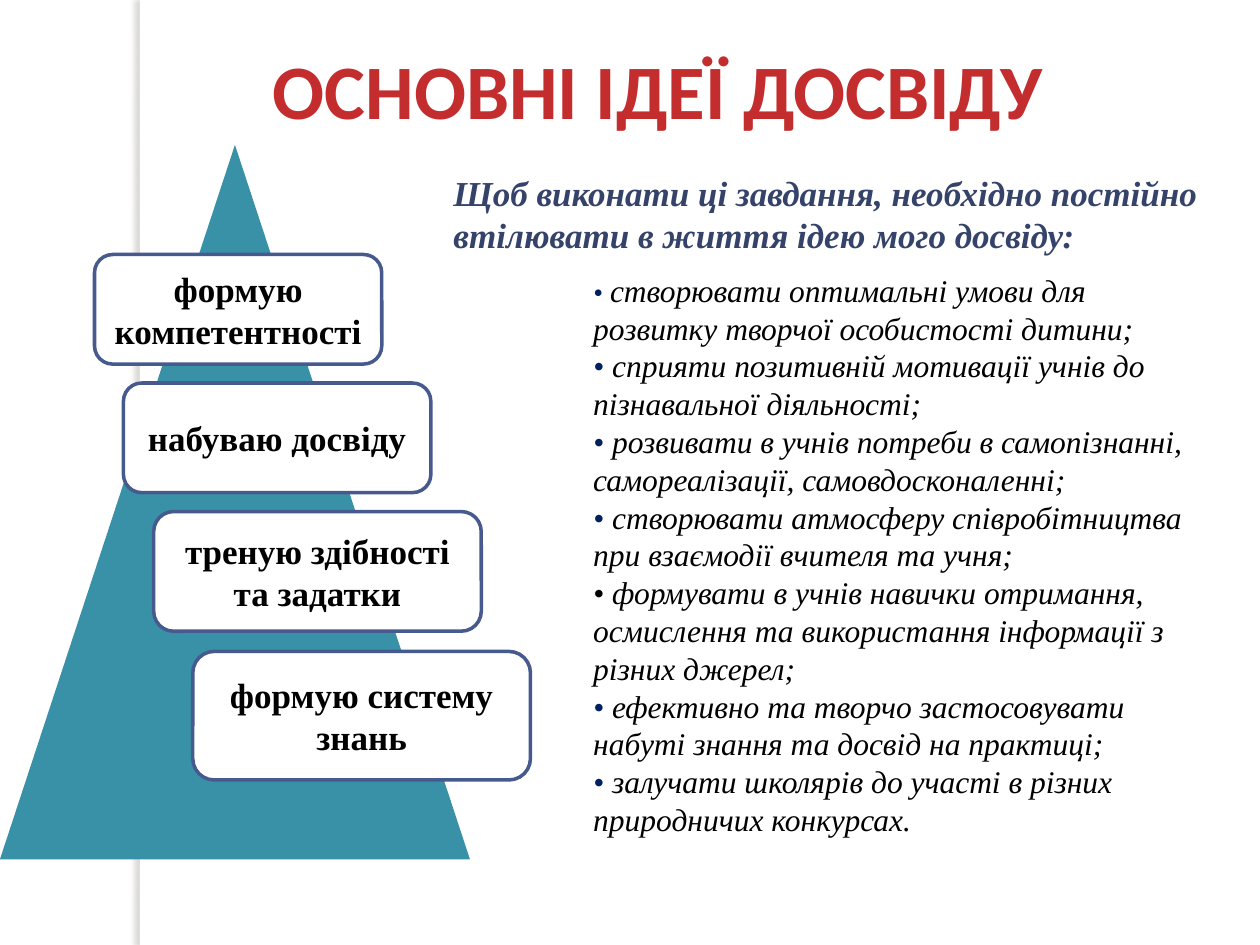
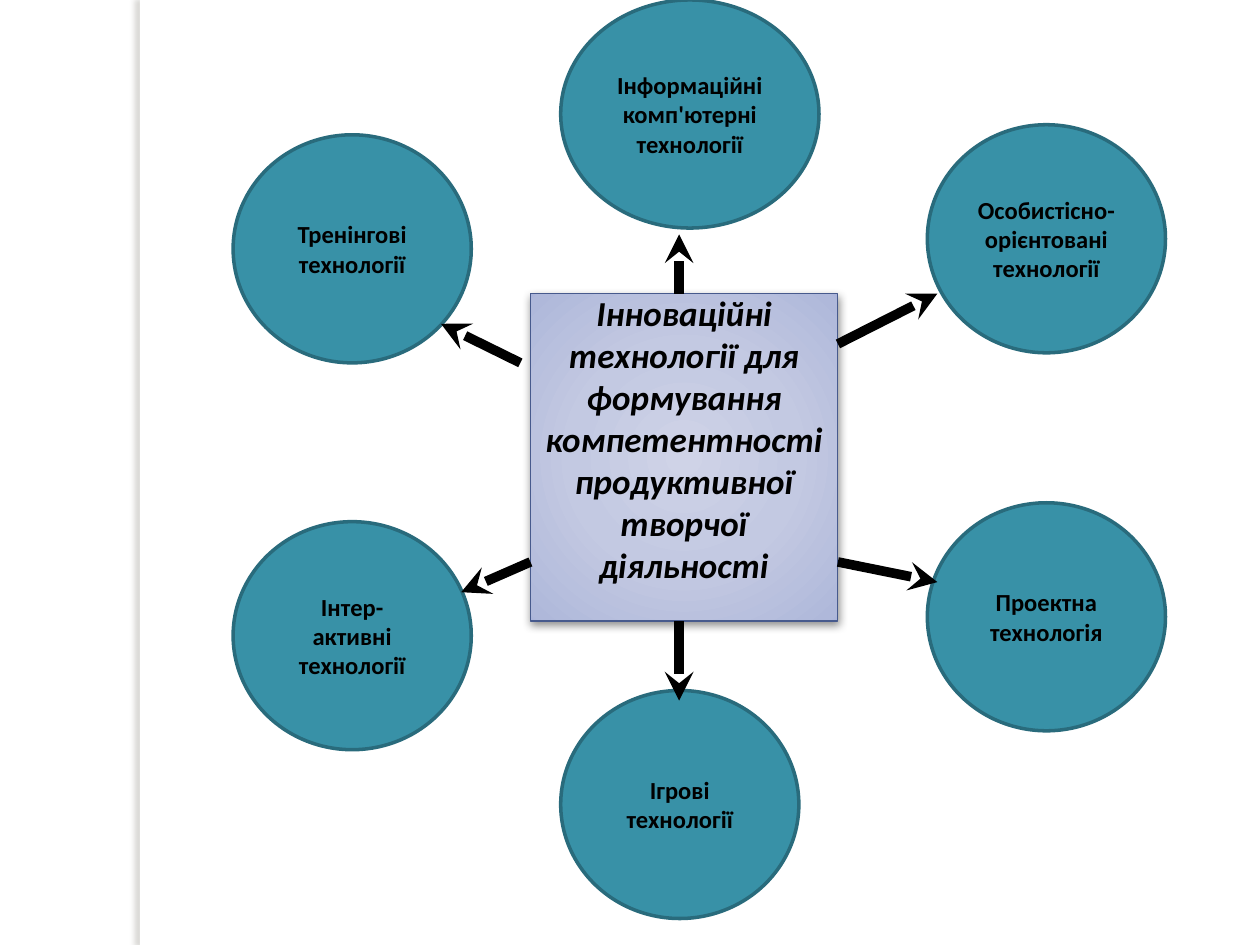
from lxml import etree
from pptx import Presentation
from pptx.dml.color import RGBColor
from pptx.enum import shapes, text
from pptx.oxml import parse_xml
from pptx.oxml.ns import nsdecls, qn
from pptx.util import Inches, Pt

SERIF, SANS = "Times New Roman", "Calibri"
BLACK, WHITE, RED, NAVY = "000000", "FFFFFF", "C32D2E", "002060"
TEAL, DEEP, SLATE, INDIGO = "3891A7", "296B7C", "475A8D", "35436A"

TITLE = "ОСНОВНІ ІДЕЇ ДОСВІДУ"
LEAD = "Щоб виконати ці завдання, необхідно постійно втілювати в життя ідею мого досвіду:"
IDEAS = [
    "створювати оптимальні умови для\nрозвитку творчої особистості дитини;",
    "сприяти позитивній мотивації учнів до\nпізнавальної діяльності;",
    "розвивати в учнів потреби в самопізнанні, самореалізації, самовдосконаленні;",
    "створювати атмосферу співробітництва при взаємодії вчителя та учня;",
    "формувати в учнів навички отримання,\nосмислення та використання інформації з\nрізних джерел;",
    "ефективно та творчо застосовувати\nнабуті знання та досвід на практиці;",
    "залучати школярів до участі в різних\nприродничих конкурсах.",
]
SMALL_DOT, DARK_DOT = 0, 4
STEPS = [
    ("формую\nкомпетентності", 0.75, 2.02, 2.28, 0.87),
    ("набуваю досвіду", 0.98, 3.04, 2.44, 0.87),
    ("треную здібності\nта задатки", 1.22, 4.06, 2.6, 0.95),
    ("формую систему\nзнань", 1.53, 5.17, 2.68, 1.02),
]
HUB = "Інноваційні\nтехнології для\nформування\nкомпетентності\nпродуктивної\nтворчої\nдіяльності"
LEFT, MID, RIGHT = 1.85, 4.45, 7.36
WIDE, HIGH = 1.89, 1.81
TECHS = [
    ("Тренінгові\nтехнології", LEFT, 1.07, WIDE),
    ("Інформаційні\nкомп'ютерні\nтехнології", MID, 0, 2.05),
    ("Інтер-\nактивні\nтехнології", LEFT, 4.14, WIDE),
    ("Ігрові\nтехнології", MID, 5.48, WIDE),
    ("Проектна\nтехнологія", RIGHT, 3.99, WIDE),
    ("Особистісно-\nорієнтовані\nтехнології", RIGHT, 0.99, WIDE),
]
ARROWS = [
    (4.21, 4.46, 3.66, 4.7),
    (5.39, 4.93, 5.39, 5.56),
    (6.65, 4.46, 7.44, 4.62),
    (6.65, 2.73, 7.44, 2.33),
    (5.39, 2.33, 5.39, 1.86),
    (4.13, 2.88, 3.5, 2.57),
]
GLOW = [(0, "CFD3E7"), (50, "C3C9E2"), (97, "AFB8DA"), (100, "A8B2DA")]


def paint(tone):
    return RGBColor.from_string(tone)


def style(font, face, size, tone, bold=False, slant=False):
    font.name, font.size = face, Pt(size)
    font.bold, font.italic = bold, slant
    font.color.rgb = paint(tone)


def write(frame, words, *look, align=text.PP_ALIGN.CENTER, slant=False):
    frame.word_wrap = True
    for i, line in enumerate(words.split("\n")):
        para = frame.paragraphs[0] if i == 0 else frame.add_paragraph()
        para.text, para.alignment = line, align
        style(para.font, *look, bold=True, slant=slant)


def draw(slide, kind, box, fill, edge=None, thick=2):
    shape = slide.shapes.add_shape(kind, *map(Inches, box))
    shape.shadow.inherit = False
    shape.fill.solid()
    shape.fill.fore_color.rgb = paint(fill)
    if edge:
        shape.line.color.rgb = paint(edge)
        shape.line.width = Pt(thick)
    else:
        shape.line.fill.background()
    shape.text_frame.vertical_anchor = text.MSO_ANCHOR.MIDDLE
    return shape


def shade(shape, tone, alpha, blur, dist, angle):
    effects = shape._element.spPr.find(qn("a:effectLst"))
    effects.append(parse_xml(
        f'<a:outerShdw {nsdecls("a")} blurRad="{Pt(blur)}" dist="{Pt(dist)}" '
        f'dir="{angle * 60000}" algn="ctr" rotWithShape="0"><a:srgbClr val="{tone}">'
        f'<a:alpha val="{alpha * 1000}"/></a:srgbClr></a:outerShdw>'))


def glow(shape):
    stops = "".join(f'<a:gs pos="{pos * 1000}"><a:srgbClr val="{tone}"/></a:gs>'
                    for pos, tone in GLOW)
    props = shape._element.spPr
    props.replace(props.find(qn("a:solidFill")), parse_xml(
        f'<a:gradFill {nsdecls("a")} rotWithShape="1"><a:gsLst>{stops}</a:gsLst>'
        '<a:path path="circle"><a:fillToRect l="50000" t="50000" r="50000" b="50000"/>'
        '</a:path></a:gradFill>'))


def arrow(slide, ends):
    link = slide.shapes.add_connector(shapes.MSO_CONNECTOR.STRAIGHT, *map(Inches, ends))
    link.line.color.rgb = paint(BLACK)
    link.line.width = Pt(5.5)
    props = link._element.spPr
    etree.SubElement(props.find(qn("a:ln")), qn("a:tailEnd"), type="stealth")
    etree.SubElement(props, qn("a:effectLst"))


def label(slide, box):
    return slide.shapes.add_textbox(*map(Inches, box)).text_frame


def start(deck):
    slide = deck.slides.add_slide(deck.slide_layouts[6])
    band = draw(slide, shapes.MSO_SHAPE.RECTANGLE, (1.11, 0, 0.08, 7.5), WHITE)
    shade(band, "736F63", 25, 3, 3, 180)
    return slide


def list_ideas(frame):
    frame.word_wrap = True
    para = frame.paragraphs[0]
    for i, idea in enumerate(IDEAS):
        for j, line in enumerate(idea.split("\n")):
            if i or j:
                para = frame.add_paragraph()
            style(para.font, SERIF, 18, BLACK, slant=True)
            if j == 0:
                dot = para.add_run()
                dot.text = "• "
                dot.font.color.rgb = paint(BLACK if i == DARK_DOT else NAVY)
                if i == SMALL_DOT:
                    dot.font.size = Pt(16)
            para.add_run().text = line


def build_ideas(deck):
    slide = start(deck)
    head = label(slide, (1.75, 0.29, 6.95, 0.84))
    write(head, TITLE, SANS, 44, RED)
    head.word_wrap = False
    list_ideas(label(slide, (4.61, 2.1, 5.12, 4.95)))
    draw(slide, shapes.MSO_SHAPE.ISOSCELES_TRIANGLE, (0, 1.15, 3.73, 5.67), TEAL)
    for words, *box in STEPS:
        step = draw(slide, shapes.MSO_SHAPE.ROUNDED_RECTANGLE, box, WHITE, SLATE)
        write(step.text_frame, words, SERIF, 20, BLACK)
    write(label(slide, (3.5, 1.31, 6.22, 0.77)), LEAD, SERIF, 20, INDIGO,
          align=text.PP_ALIGN.LEFT, slant=True)


def build_techs(deck):
    slide = start(deck)
    hub = draw(slide, shapes.MSO_SHAPE.RECTANGLE, (4.21, 2.33, 2.44, 2.6),
               GLOW[0][1], SLATE, 0.75)
    glow(hub)
    shade(hub, BLACK, 43, 5, 2, 90)
    write(hub.text_frame, HUB, SANS, 20, BLACK, slant=True)
    hub.text_frame.margin_bottom = Inches(0.35)
    for words, left, top, width in TECHS:
        disc = draw(slide, shapes.MSO_SHAPE.OVAL, (left, top, width, HIGH), TEAL, DEEP)
        write(disc.text_frame, words, SANS, 14, BLACK)
    for ends in ARROWS:
        arrow(slide, ends)


def main():
    deck = Presentation()
    deck.slide_width, deck.slide_height = Inches(10), Inches(7.5)
    build_ideas(deck)
    build_techs(deck)
    deck.save("out.pptx")


if __name__ == "__main__":
    main()
